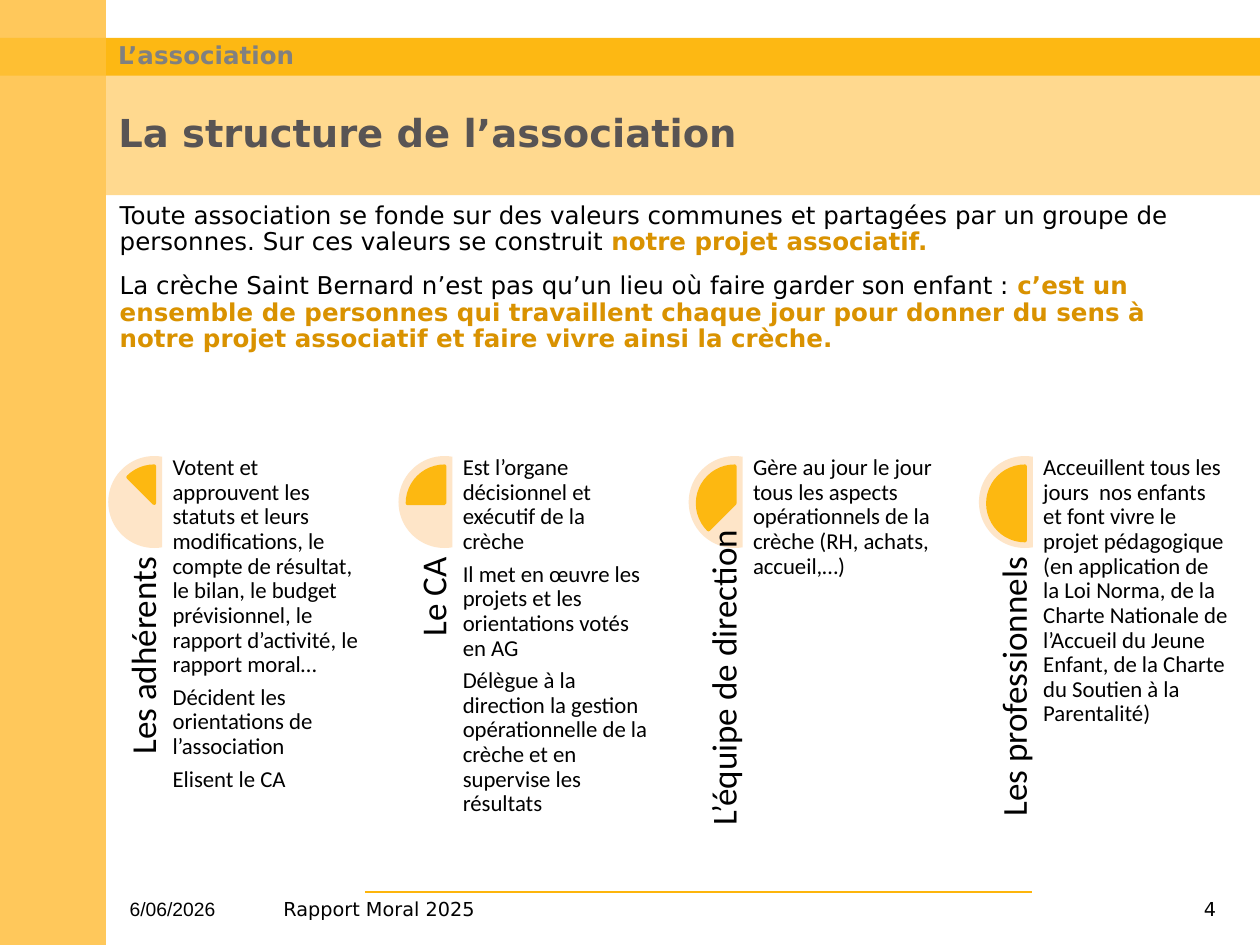
from lxml.etree import SubElement
from pptx import Presentation
from pptx.dml.color import RGBColor
from pptx.enum.shapes import MSO_CONNECTOR as Connector, MSO_SHAPE as Shape
from pptx.enum.text import MSO_ANCHOR as Anchor, MSO_AUTO_SIZE as AutoSize, PP_ALIGN as Align
from pptx.oxml.ns import qn
from pptx.util import Inches, Pt

BLACK = RGBColor(0x00, 0x00, 0x00)
TITLE_GREY = RGBColor(0x58, 0x54, 0x54)
SECTION_GREY = RGBColor(0x80, 0x80, 0x80)
ACCENT = RGBColor(0xD9, 0x92, 0x00)
TITLE_BAND = RGBColor(0xFF, 0xD9, 0x8F)
SIDEBAR = RGBColor(0xFF, 0xC8, 0x5B)
SECTION_BAND = RGBColor(0xFD, 0xB8, 0x13)
CROSSING = RGBColor(0xFE, 0xBF, 0x33)
RULE = RGBColor(0xFD, 0xB5, 0x0C)
CHORD = RGBColor(0xFE, 0xE5, 0xC8)
PIE = RGBColor(0xFD, 0xB8, 0x11)

BANDS = [
    ((0.84, 0.59, 9.16, 0.96), TITLE_BAND),
    ((0, 0, 0.84, 7.5), SIDEBAR),
    ((0.84, 0.3, 9.16, 0.3), SECTION_BAND),
    ((0, 0.3, 0.84, 0.3), CROSSING),
]
INTRODUCTION = [
    [("Toute association se fonde sur des valeurs communes et partagées par un groupe de "
      "personnes. Sur ces valeurs se construit ", BLACK, False),
     ("notre projet associatif.", ACCENT, True)],
    [("La crèche Saint Bernard n’est pas qu’un lieu où faire garder son enfant : ", BLACK, False),
     ("c’est un ensemble de personnes qui travaillent chaque jour pour donner du sens à "
      "notre projet associatif et faire vivre ainsi la crèche.", ACCENT, True)],
]
GROUPS = [
    ("Les adhérents", 2.13, Align.RIGHT, [
        "Votent et approuvent les statuts et leurs modifications, le compte de résultat, "
        "le bilan, le budget prévisionnel, le rapport d’activité, le rapport moral…",
        "Décident les orientations de l’association",
        "Elisent le CA"]),
    ("Le CA", 2.13, Align.RIGHT, [
        "Est l’organe décisionnel et exécutif de la crèche",
        "Il met en œuvre les projets et les orientations votés en AG",
        "Délègue à la direction la gestion opérationnelle de la crèche et en supervise "
        "les résultats"]),
    ("L’équipe de direction", 2.73, Align.LEFT, [
        "Gère au jour le jour tous les aspects opérationnels de la crèche "
        "(RH, achats, accueil,…)"]),
    ("Les professionnels", 2.13, Align.RIGHT, [
        "Acceuillent tous les jours  nos enfants et font vivre le projet pédagogique "
        "(en application de la Loi Norma, de la Charte Nationale de l’Accueil du Jeune "
        "Enfant, de la Charte du Soutien à la Parentalité)"]),
]
FIRST_LEFT, LAST_LEFT = 0.86, 7.77
PITCH = (LAST_LEFT - FIRST_LEFT) / (len(GROUPS) - 1)
TOP, BOTTOM = 3.62, 6.55


class SlideBuilder:
    """Draws styled elements on the current slide."""

    font = "DejaVu Sans"
    line_spacing = 0.9

    def __init__(self, slide):
        self.slide = slide

    def shape(self, kind, box, fill, angles=(), line_width=0):
        shape = self.slide.shapes.add_shape(kind, *map(Inches, box))
        shape.shadow.inherit = False
        shape.fill.solid()
        shape.fill.fore_color.rgb = fill
        if line_width:
            shape.line.color.rgb = fill
            shape.line.width = Pt(line_width)
        else:
            shape.line.fill.background()
        for index, angle in enumerate(angles):
            shape.adjustments[index] = angle

    def line(self, start, end, color, width):
        connector = self.slide.shapes.add_connector(
            Connector.STRAIGHT, *map(Inches, start + end))
        connector.line.color.rgb = color
        connector.line.width = Pt(width)
        SubElement(connector._element.spPr, qn("a:effectLst"))

    def fill_text(self, shape, paragraphs, size, font=None, align=Align.LEFT,
                  anchor=Anchor.TOP, gap=0, inset=True):
        frame = shape.text_frame
        frame.word_wrap = True
        frame.auto_size = AutoSize.NONE
        frame.vertical_anchor = anchor
        if not inset:
            frame.margin_left = frame.margin_right = 0
            frame.margin_top = frame.margin_bottom = 0
        for index, runs in enumerate(paragraphs):
            paragraph = frame.add_paragraph() if index else frame.paragraphs[0]
            paragraph.alignment = align
            paragraph.line_spacing = self.line_spacing
            paragraph.space_before = Pt(gap if index else 0)
            for text, color, bold in runs:
                run = paragraph.add_run()
                run.text = text
                run.font.name = font or self.font
                run.font.size = Pt(size)
                run.font.bold = bold
                run.font.color.rgb = color

    def text(self, box, paragraphs, size, rotation=0, **style):
        shape = self.slide.shapes.add_textbox(*map(Inches, box))
        shape.rotation = rotation
        self.fill_text(shape, paragraphs, size, **style)

    def placeholder(self, index, box, paragraphs, size, **style):
        shape = self.slide.placeholders[index]
        shape.left, shape.top, shape.width, shape.height = map(Inches, box)
        shape.element.getparent().append(shape.element)
        self.fill_text(shape, paragraphs, size, **style)
        for paragraph in shape.text_frame.paragraphs:
            properties = paragraph._p.get_or_add_pPr()
            properties.set("marL", "0")
            properties.set("indent", "0")
            SubElement(properties, qn("a:buNone"))

    def group(self, left, label, length, align, details, start_angle):
        self.shape(Shape.CHORD, (left, TOP, 0.73, 0.73), CHORD, (48, 168))
        self.shape(Shape.PIE, (left + 0.07, TOP + 0.08, 0.59, 0.59), PIE,
                   (start_angle, 162), 2)
        height = 0.44
        box = (left + (height - length) / 2, BOTTOM - (length + height) / 2, length, height)
        self.text(box, [[(label, BLACK, False)]], 20, rotation=270, font="Calibri",
                  align=align, anchor=Anchor.BOTTOM, inset=False)
        self.text((left + 0.51, TOP, 1.47, BOTTOM - TOP),
                  [[(detail, BLACK, False)] for detail in details], 13,
                  font="Calibri", gap=4.6, inset=False)


def main():
    presentation = Presentation()
    presentation.slide_width, presentation.slide_height = Inches(10), Inches(7.5)
    builder = SlideBuilder(presentation.slides.add_slide(presentation.slide_layouts[1]))

    for box, fill in BANDS:
        builder.shape(Shape.RECTANGLE, box, fill)
    builder.line((2.9, 7.08), (8.19, 7.08), RULE, 0.75)

    builder.text((0.93, 7.09, 1.31, 0.4), [[("6/06/2026", BLACK, False)]], 11, font="Arial")
    builder.text((2.15, 7.09, 4.88, 0.4), [[("Rapport Moral 2025", BLACK, False)]], 11)
    builder.text((7.74, 7.09, 2.01, 0.4), [[("4", BLACK, False)]], 11, align=Align.RIGHT)

    builder.placeholder(0, (0.84, 0.59, 8.9, 0.96),
                        [[("La structure de l’association", TITLE_GREY, True)]], 22,
                        anchor=Anchor.MIDDLE)
    builder.text((0.84, 0.3, 3.17, 0.3), [[("L’association", SECTION_GREY, True)]], 14,
                 anchor=Anchor.MIDDLE)
    builder.placeholder(1, (0.85, 1.56, 8.89, 1.5), INTRODUCTION, 14, gap=10)

    for index, (label, length, align, details) in enumerate(GROUPS):
        builder.group(FIRST_LEFT + index * PITCH, label, length, align, details,
                      135 - 27 * index)
    presentation.save("out.pptx")


if __name__ == "__main__":
    main()
